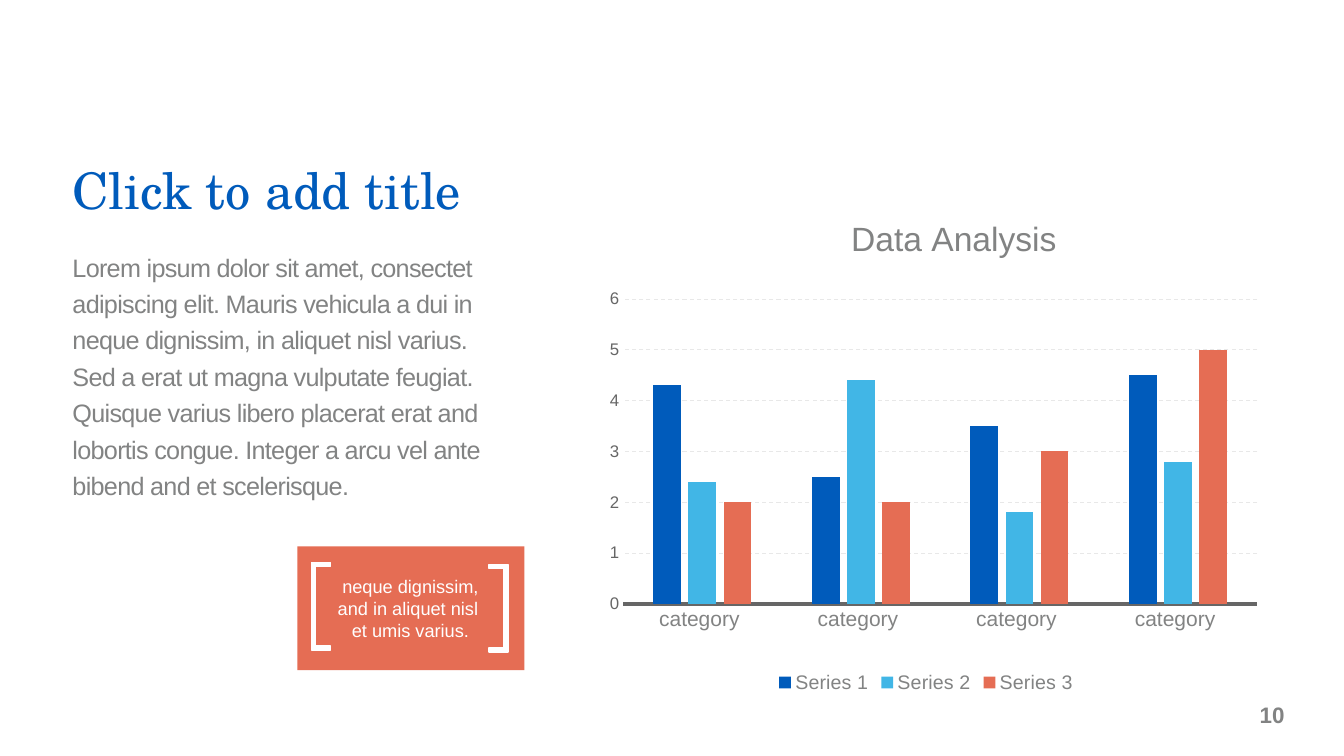
from dataclasses import dataclass

from lxml import etree
from pptx import Presentation
from pptx import slide as sl
from pptx import util as u
from pptx.chart import chart as ch
from pptx.chart import data as cd
from pptx.dml.color import RGBColor
from pptx.enum import chart as ce
from pptx.enum import dml, shapes, text
from pptx.oxml import parse_xml
from pptx.oxml import ns

BLUE = RGBColor(0x00, 0x5B, 0xBB)
SKY = RGBColor(0x41, 0xB6, 0xE6)
CORAL = RGBColor(0xE5, 0x6D, 0x54)
GREY = RGBColor(0x82, 0x83, 0x83)
DARK = RGBColor(0x66, 0x66, 0x66)
PALE = RGBColor(0xE8, 0xE8, 0xE8)
WHITE = RGBColor(0xFF, 0xFF, 0xFF)
SANS = "Arial"
SERIF = "TeX Gyre Schola"

BODY = (
    "Lorem ipsum dolor sit amet, consectet adipiscing elit. Mauris vehicula a dui in "
    "neque dignissim, in aliquet nisl varius. Sed a erat ut magna vulputate feugiat. "
    "Quisque varius libero placerat erat and lobortis congue. Integer a arcu vel ante "
    "bibend and et scelerisque."
)


@dataclass(frozen=True)
class Bracket:
    edge: float
    top: float
    reach: float
    height: float = 0.87
    thickness: float = 0.04


@dataclass(frozen=True)
class Series:
    name: str
    values: tuple[float, ...]
    color: RGBColor


BRACKETS = (Bracket(3.09, 5.58, 0.19), Bracket(5.04, 5.6, -0.19))
SERIES = (
    Series("Series 1", (4.3, 2.5, 3.5, 4.5), BLUE),
    Series("Series 2", (2.4, 4.4, 1.8, 2.8), SKY),
    Series("Series 3", (2, 2, 3, 5), CORAL),
)


def set_font(font: text, size: float, color: RGBColor, name: str = SANS, bold: bool = False) -> None:
    font.name = name
    font.size = u.Pt(size)
    font.bold = bold
    font.color.rgb = color


def add_text(page: sl.Slide, wording: str, left: float, top: float, width: float, height: float, *,
             size: float, color: RGBColor = GREY, name: str = SANS, bold: bool = False,
             align: text.PP_ALIGN = text.PP_ALIGN.LEFT,
             anchor: text.MSO_ANCHOR = text.MSO_ANCHOR.TOP,
             line_spacing: float | u.Length | None = None,
             tracking: int = 0, side_inset: float = 0.1) -> None:
    box = page.shapes.add_textbox(u.Inches(left), u.Inches(top), u.Inches(width), u.Inches(height))
    frame = box.text_frame
    frame.word_wrap = True
    frame.vertical_anchor = anchor
    frame.margin_left = frame.margin_right = u.Inches(side_inset)
    para = frame.paragraphs[0]
    para.text = wording
    para.alignment = align
    para.line_spacing = line_spacing
    for span in para.runs:
        set_font(span.font, size, color, name, bold)
        if tracking:
            span.font._element.set("spc", str(tracking))


def add_bracket(page: sl.Slide, bracket: Bracket) -> None:
    tip = bracket.edge + bracket.reach
    inner = bracket.edge + (bracket.thickness if bracket.reach > 0 else -bracket.thickness)
    bottom = bracket.top + bracket.height
    upper, lower = bracket.top + bracket.thickness, bottom - bracket.thickness
    points = [(bracket.edge, bracket.top), (bracket.edge, bottom), (tip, bottom),
              (tip, lower), (inner, lower), (inner, upper), (tip, upper)]
    builder = page.shapes.build_freeform(u.Inches(tip), u.Inches(bracket.top))
    builder.add_line_segments([(u.Inches(x), u.Inches(y)) for x, y in points], close=True)
    shape = builder.convert_to_shape()
    shape.shadow.inherit = False
    shape.fill.solid()
    shape.fill.fore_color.rgb = WHITE
    shape.line.color.rgb = WHITE
    shape.line.width = u.Pt(1)


def add_callout(page: sl.Slide) -> None:
    card = page.shapes.add_shape(shapes.MSO_SHAPE.RECTANGLE, u.Inches(2.95), u.Inches(5.42),
                                 u.Inches(2.25), u.Inches(1.23))
    card.shadow.inherit = False
    card.fill.solid()
    card.fill.fore_color.rgb = CORAL
    card.line.fill.background()
    for bracket in BRACKETS:
        add_bracket(page, bracket)
    add_text(page, "neque dignissim, and in aliquet nisl \vet umis varius.", 3.21, 5.66, 1.72, 0.76,
             size=13, color=WHITE, align=text.PP_ALIGN.CENTER)


def manual_layout(target: str | None = None, **places: float) -> etree._Element:
    inner = f'<c:layoutTarget val="{target}"/>' if target else ""
    modes = '<c:xMode val="edge"/><c:yMode val="edge"/>'
    values = "".join(f'<c:{key} val="{value}"/>' for key, value in places.items())
    return parse_xml(f'<c:layout {ns.nsdecls("c")}><c:manualLayout>{inner}{modes}{values}'
                     "</c:manualLayout></c:layout>")


def replace_layout(parent: etree._Element, layout: etree._Element, position: int) -> None:
    for old in parent.findall(ns.qn("c:layout")):
        parent.remove(old)
    parent.insert(position, layout)


def style_axes(chart: ch.Chart) -> None:
    for axis, size, color in ((chart.category_axis, 15, GREY), (chart.value_axis, 12, DARK)):
        axis.major_tick_mark = axis.minor_tick_mark = ce.XL_TICK_MARK.NONE
        set_font(axis.tick_labels.font, size, color)
    chart.category_axis.format.line.color.rgb = DARK
    chart.category_axis.format.line.width = u.Pt(3.25)
    scale = chart.value_axis
    scale.minimum_scale, scale.maximum_scale, scale.major_unit = 0, 6, 1
    scale.format.line.fill.background()
    grid = scale.major_gridlines.format.line
    grid.color.rgb = PALE
    grid.width = u.Pt(0.75)
    grid.dash_style = dml.MSO_LINE.DASH


def add_analysis_chart(page: sl.Slide) -> None:
    data = cd.CategoryChartData(number_format="General")
    data.categories = ["category "] * 4
    for series in SERIES:
        data.add_series(series.name, series.values)
    chart = page.shapes.add_chart(ce.XL_CHART_TYPE.COLUMN_CLUSTERED, u.Inches(5.69), u.Inches(2.04),
                                  u.Inches(6.99), u.Inches(4.88), data).chart
    set_font(chart.font, 10, DARK)
    chart.has_title = True
    title = chart.chart_title
    title.include_in_layout = False
    title.text_frame.text = "Data Analysis"
    set_font(title.text_frame.paragraphs[0].runs[0].font, 24, GREY)
    replace_layout(title._element, manual_layout(x=0.385, y=0.01), 1)
    chart.has_legend = True
    chart.legend.position = ce.XL_LEGEND_POSITION.BOTTOM
    chart.legend.include_in_layout = False
    set_font(chart.legend.font, 14, GREY)
    style_axes(chart)
    plot = chart.plots[0]
    plot.gap_width, plot.overlap = 219, -27
    plot.vary_by_categories = False
    for bars, series in zip(plot.series, SERIES):
        bars.format.fill.solid()
        bars.format.fill.fore_color.rgb = series.color
    area = chart._chartSpace.chart.plotArea
    replace_layout(area, manual_layout("inner", x=0.07, y=0.19, w=0.9, h=0.62), 0)


def main() -> None:
    deck = Presentation()
    deck.slide_width, deck.slide_height = u.Inches(13.33), u.Inches(7.5)
    page = deck.slides.add_slide(deck.slide_layouts[6])
    add_text(page, "10", 12.08, 6.8, 0.79, 0.58, size=16, bold=True, side_inset=0.13,
             align=text.PP_ALIGN.RIGHT, anchor=text.MSO_ANCHOR.MIDDLE)
    add_analysis_chart(page)
    add_text(page, "Click to add title", 0.62, 1.44, 4.67, 0.78, size=36, color=BLUE, name=SERIF,
             anchor=text.MSO_ANCHOR.BOTTOM, line_spacing=0.8)
    add_text(page, BODY, 0.62, 2.39, 4.38, 3.03, size=18, line_spacing=u.Pt(26), tracking=-50)
    add_callout(page)
    deck.save("out.pptx")


if __name__ == "__main__":
    main()
